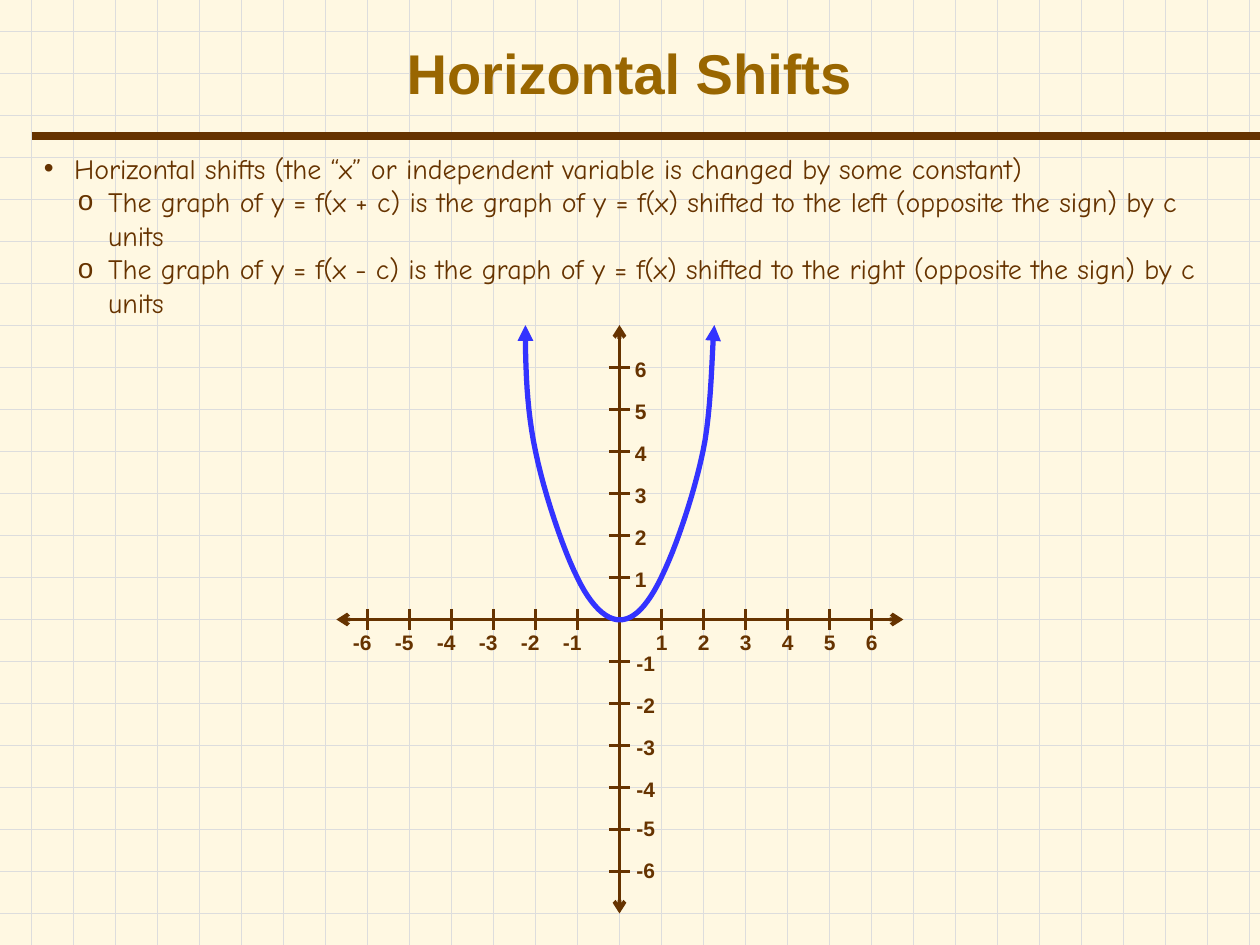
from pptx import Presentation
from pptx.dml.color import RGBColor
from pptx.enum.shapes import MSO_CONNECTOR
from pptx.enum.text import MSO_ANCHOR, PP_ALIGN
from pptx.oxml.ns import qn
from pptx.util import Inches, Pt
from lxml import etree

LINE = MSO_CONNECTOR.STRAIGHT
MID = MSO_ANCHOR.MIDDLE
CENTER = PP_ALIGN.CENTER

# Content
TITLE = "Horizontal Shifts"
POINTS = [
    (0, "•", "Horizontal shifts (the “x” or independent variable is changed by some constant)"),
    (1, "o", "The graph of y = f(x + c) is the graph of y = f(x) shifted to the left (opposite the sign) by c units"),
    (1, "o", "The graph of y = f(x - c) is the graph of y = f(x) shifted to the right (opposite the sign) by c units"),
]
TICKS = [n for n in range(-6, 7) if n]
# Bezier curve: a start, then two handles and an end per piece
START = (4.17, 2.58)
CURVE = [
    ((4.17, 2.92), (4.18, 3.25), (4.25, 3.58)),
    ((4.32, 3.92), (4.47, 4.36), (4.58, 4.58)),
    ((4.69, 4.81), (4.81, 4.92), (4.92, 4.92)),
    ((5.03, 4.92), (5.14, 4.81), (5.25, 4.58)),
    ((5.36, 4.36), (5.51, 3.92), (5.58, 3.58)),
    ((5.65, 3.25), (5.65, 2.75), (5.67, 2.58)),
]
COLORS = {"paper": "FFF8E2", "grid": "DDDDDD", "ink": "663300",
          "title": "996600", "curve": "3333FF"}
WIDE, HIGH = 10, 7.5
UNIT = 1 / 3
EDGE = 0.25
ZERO = EDGE + 14 * UNIT  # both axes cross here
HALF = UNIT / 4
STEPS = 12


def color(name):
    return RGBColor.from_string(COLORS[name])


def style(shape, name, width, arrow=None):
    shape.line.color.rgb = color(name)
    shape.line.width = Pt(width)
    if arrow:
        ln = shape.line._get_or_add_ln()
        for end in ("a:headEnd", "a:tailEnd"):
            etree.SubElement(ln, qn(end), type=arrow)


def draw(shapes, x1, y1, x2, y2, name, width, arrow=None):
    line = shapes.add_connector(LINE, *map(Inches, (x1, y1, x2, y2)))
    style(line, name, width, arrow)
    etree.SubElement(line._element.spPr, qn("a:effectLst"))


def set_font(para, face, size, name, bold=False):
    font = para.font
    font.name, font.size, font.bold = face, Pt(size), bold
    font.color.rgb = color(name)


def add_label(shapes, n, x, y, width):
    frame = shapes.add_textbox(*map(Inches, (x, y, width, 0.2))).text_frame
    frame.margin_left = frame.margin_right = 0
    frame.margin_top = frame.margin_bottom = 0
    frame.word_wrap = True
    para = frame.paragraphs[0]
    para.text, para.alignment = str(n), CENTER
    set_font(para, "Arial", 12, "ink", True)


def add_bullet(para, level, mark):
    props = para._p.get_or_add_pPr()
    props.set("marL", str(Inches((0.24, 0.51)[level])))
    props.set("indent", str(-Inches(0.24)))
    etree.SubElement(props, qn("a:buFont"), typeface="Arial")
    etree.SubElement(props, qn("a:buChar"), char=mark)


def trace(start, pieces):
    """Points along a chain of cubic Bezier pieces."""
    for a, b, end in pieces:
        for i in range(1, STEPS + 1):
            t = i / STEPS
            u = 1 - t
            yield tuple(u**3 * p + 3 * u * u * t * q + 3 * u * t * t * r + t**3 * s
                        for p, q, r, s in zip(start, a, b, end))
        start = end


def main():
    prs = Presentation()
    prs.slide_width, prs.slide_height = Inches(WIDE), Inches(HIGH)
    slide = prs.slides.add_slide(prs.slide_layouts[5])
    shapes = slide.shapes
    slide.background.fill.solid()
    slide.background.fill.fore_color.rgb = color("paper")

    # Graph paper and title rule
    for i in range(22):
        y = EDGE + i * UNIT
        draw(shapes, 0, y, WIDE, y, "grid", 1)
    for i in range(30):
        x = EDGE + i * UNIT
        draw(shapes, x, 0, x, HIGH, "grid", 1)
    draw(shapes, EDGE, 1.08, WIDE, 1.08, "ink", 4.5)

    # Title, brought in front of the grid
    title = shapes.title
    title.left, title.top, title.width, title.height = map(Inches, (0.16, 0.14, 9.67, 0.86))
    title.text_frame.text = TITLE
    title.text_frame.vertical_anchor = MID
    para = title.text_frame.paragraphs[0]
    para.alignment = CENTER
    set_font(para, "Arial", 32, "title", True)
    shapes._spTree.append(title._element)

    # Bullet text
    frame = shapes.add_textbox(*map(Inches, (0.25, 1.15, 9.67, 1.44))).text_frame
    frame.word_wrap = True
    for i, (level, mark, text) in enumerate(POINTS):
        para = frame.add_paragraph() if i else frame.paragraphs[0]
        para.text, para.level = text, level
        set_font(para, "Comic Neue", 16, "ink")
        add_bullet(para, level, mark)

    # Axes
    draw(shapes, ZERO, 2.58, ZERO, 7.25, "ink", 2.25, "arrow")
    draw(shapes, 2.67, ZERO, 7.17, ZERO, "ink", 2.25, "arrow")

    # Ticks and their numbers
    for n in TICKS:
        x, y = ZERO + n * UNIT, ZERO - n * UNIT
        draw(shapes, x, ZERO - HALF, x, ZERO + HALF, "ink", 1.5)
        draw(shapes, ZERO - HALF, y, ZERO + HALF, y, "ink", 1.5)
        width, shift = (0.17, HALF) if n > 0 else (0.25, 2 * HALF)
        lift = 0.03 if n < -4 else 0
        add_label(shapes, n, x - shift, ZERO + HALF, width)
        add_label(shapes, n, ZERO + HALF, y - HALF - lift, width)

    # Parabola
    pen = shapes.build_freeform(*map(Inches, START), scale=1.0)
    pen.add_line_segments([(Inches(x), Inches(y)) for x, y in trace(START, CURVE)], close=False)
    curve = pen.convert_to_shape()
    curve.shadow.inherit = False
    curve.fill.background()
    style(curve, "curve", 3, "triangle")

    prs.save("out.pptx")


if __name__ == "__main__":
    main()
